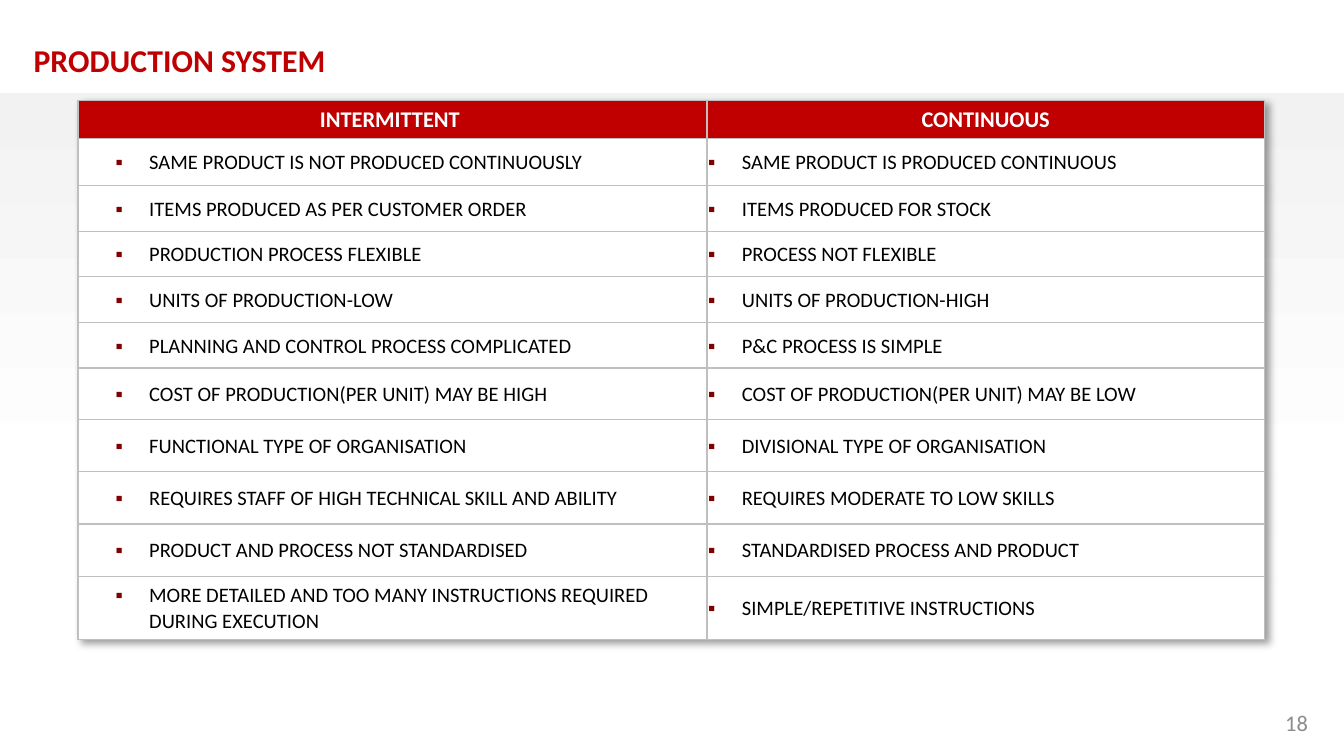
from lxml.etree import SubElement
from pptx import Presentation
from pptx.dml.color import RGBColor
from pptx.enum.shapes import MSO_SHAPE
from pptx.enum.text import MSO_ANCHOR, MSO_AUTO_SIZE, PP_ALIGN
from pptx.oxml import parse_xml
from pptx.oxml.ns import nsdecls, qn
from pptx.util import Inches, Pt

RED = RGBColor(0xC0, 0x00, 0x00)
DARK_RED = RGBColor(0x80, 0x00, 0x00)
WHITE = RGBColor(0xFF, 0xFF, 0xFF)
BLACK = RGBColor(0x00, 0x00, 0x00)
PALE_GREY = RGBColor(0xF2, 0xF2, 0xF2)
BORDER_GREY = RGBColor(0xBF, 0xBF, 0xBF)
NUMBER_GREY = RGBColor(0x8C, 0x8C, 0x8C)

TITLE_FORMAT = {"size": Pt(17), "bold": True, "color": RED}
HEADER_FORMAT = {"size": Pt(12), "bold": True, "color": WHITE}
BODY_FORMAT = {"size": Pt(11), "bold": False, "color": BLACK}
NUMBER_FORMAT = {"size": Pt(12), "bold": False, "color": NUMBER_GREY}

COLUMN_WIDTHS = [4.68, 4.15]
ROW_HEIGHTS = [0.28, 0.35] + [0.34] * 4 + [0.38] + [0.39] * 3 + [0.47]
ROWS = [
    ("INTERMITTENT ", "CONTINUOUS"),
    ("SAME PRODUCT IS NOT PRODUCED CONTINUOUSLY", "SAME PRODUCT IS PRODUCED CONTINUOUS"),
    ("ITEMS PRODUCED AS PER CUSTOMER ORDER", "ITEMS PRODUCED FOR STOCK"),
    ("PRODUCTION PROCESS FLEXIBLE", "PROCESS NOT FLEXIBLE"),
    ("UNITS OF PRODUCTION-LOW", "UNITS OF PRODUCTION-HIGH"),
    ("PLANNING AND CONTROL PROCESS COMPLICATED", "P&C PROCESS IS SIMPLE"),
    ("COST OF PRODUCTION(PER UNIT) MAY BE HIGH", "COST OF PRODUCTION(PER UNIT) MAY BE LOW"),
    ("FUNCTIONAL TYPE OF ORGANISATION", "DIVISIONAL TYPE OF ORGANISATION"),
    ("REQUIRES STAFF OF HIGH TECHNICAL SKILL AND ABILITY", "REQUIRES MODERATE TO LOW SKILLS"),
    ("PRODUCT AND PROCESS NOT STANDARDISED", "STANDARDISED PROCESS AND PRODUCT"),
    (
        "MORE DETAILED AND TOO MANY INSTRUCTIONS REQUIRED DURING EXECUTION",
        "SIMPLE/REPETITIVE INSTRUCTIONS",
    ),
]


def write_text(text_frame, text, text_format, alignment=PP_ALIGN.LEFT):
    """Write one formatted paragraph and return it."""
    paragraph = text_frame.paragraphs[0]
    paragraph.alignment = alignment
    run = paragraph.add_run()
    run.text = text
    run.font.name = "Calibri"
    for name, value in text_format.items():
        if name == "color":
            run.font.color.rgb = value
        else:
            setattr(run.font, name, value)
    return paragraph


def add_bullet(paragraph):
    """Give a paragraph a hanging square bullet."""
    properties = paragraph._p.get_or_add_pPr()
    properties.set("marL", str(Inches(0.25)))
    properties.set("indent", str(Inches(-0.25)))
    bullet_color = SubElement(properties, qn("a:buClr"))
    SubElement(bullet_color, qn("a:srgbClr"), val=str(DARK_RED))
    SubElement(properties, qn("a:buFont"), typeface="Calibri")
    SubElement(properties, qn("a:buChar"), char="▪")


def add_borders(cell):
    """Draw thin grey lines on all four sides of a cell."""
    properties = cell._tc.get_or_add_tcPr()
    for position, side in enumerate(("lnL", "lnR", "lnT", "lnB")):
        properties.insert(position, parse_xml(
            f'<a:{side} {nsdecls("a")} w="{Pt(0.75)}"><a:solidFill>'
            f'<a:srgbClr val="{BORDER_GREY}"/></a:solidFill></a:{side}>'
        ))


def add_backdrop(slide, left, top, width, height):
    """Add the grey panel that fades to white."""
    panel = slide.shapes.add_shape(
        MSO_SHAPE.RECTANGLE, Inches(left), Inches(top), Inches(width), Inches(height)
    )
    panel.shadow.inherit = False
    panel.line.fill.background()
    panel.fill.gradient()
    panel.fill.gradient_angle = 270
    for stop, position, color in zip(panel.fill.gradient_stops, (0, 0.58), (PALE_GREY, WHITE)):
        stop.position = position
        stop.color.rgb = color


def place_title(slide, left, top, width, height):
    """Move the title placeholder and fill it."""
    title = slide.shapes.title
    title.left, title.top = Inches(left), Inches(top)
    title.width, title.height = Inches(width), Inches(height)
    frame = title.text_frame
    frame.word_wrap = True
    frame.auto_size = MSO_AUTO_SIZE.SHAPE_TO_FIT_TEXT
    frame.vertical_anchor = MSO_ANCHOR.TOP
    write_text(frame, "PRODUCTION SYSTEM", TITLE_FORMAT)


def fill_cell(cell, text, is_header, left_margin):
    """Format one table cell and write its text."""
    margins = {"left": left_margin, "top": 0.01, "right": 0.01, "bottom": 0}
    for side, margin in margins.items():
        setattr(cell, f"margin_{side}", Inches(margin))
    cell.vertical_anchor = MSO_ANCHOR.MIDDLE
    cell.fill.solid()
    cell.fill.fore_color.rgb = RED if is_header else WHITE
    add_borders(cell)
    if is_header:
        write_text(cell.text_frame, text, HEADER_FORMAT, PP_ALIGN.CENTER)
    else:
        add_bullet(write_text(cell.text_frame, text, BODY_FORMAT))


def add_comparison_table(slide, left, top):
    """Add the two-column comparison with a soft shadow."""
    table = slide.shapes.add_table(
        len(ROWS), len(COLUMN_WIDTHS), Inches(left), Inches(top),
        Inches(sum(COLUMN_WIDTHS)), Inches(sum(ROW_HEIGHTS)),
    ).table
    table.horz_banding = False
    table._tbl.tblPr.insert(0, parse_xml(
        f'<a:effectLst {nsdecls("a")}><a:outerShdw blurRad="{Pt(4)}" dist="{Pt(3)}" '
        'dir="2700000" algn="tl" rotWithShape="0"><a:srgbClr val="000000">'
        '<a:alpha val="40000"/></a:srgbClr></a:outerShdw></a:effectLst>'
    ))
    for column, width in zip(table.columns, COLUMN_WIDTHS):
        column.width = Inches(width)
    for row_index, (texts, height) in enumerate(zip(ROWS, ROW_HEIGHTS)):
        table.rows[row_index].height = Inches(height)
        for column_index, text in enumerate(texts):
            is_header = row_index == 0
            left_margin = 0.28 if column_index == 0 and not is_header else 0.01
            fill_cell(table.cell(row_index, column_index), text, is_header, left_margin)


def add_slide_number(slide, left, top, width, height):
    """Add the page number at the lower right."""
    box = slide.shapes.add_textbox(Inches(left), Inches(top), Inches(width), Inches(height))
    box.text_frame.word_wrap = True
    box.text_frame.vertical_anchor = MSO_ANCHOR.MIDDLE
    write_text(box.text_frame, "18", NUMBER_FORMAT, PP_ALIGN.RIGHT)


def main():
    """Build and save the presentation."""
    presentation = Presentation()
    presentation.slide_width = Inches(10)
    presentation.slide_height = presentation.slide_width * 9 // 16
    slide = presentation.slides.add_slide(presentation.slide_layouts.get_by_name("Title Only"))
    add_backdrop(slide, -0.01, 0.69, 10.01, 4.94)
    place_title(slide, 0.15, 0.25, 7.43, 0.39)
    add_comparison_table(slide, 0.58, 0.75)
    add_slide_number(slide, 7.5, 5.23, 2.33, 0.3)
    presentation.save("out.pptx")


if __name__ == "__main__":
    main()
